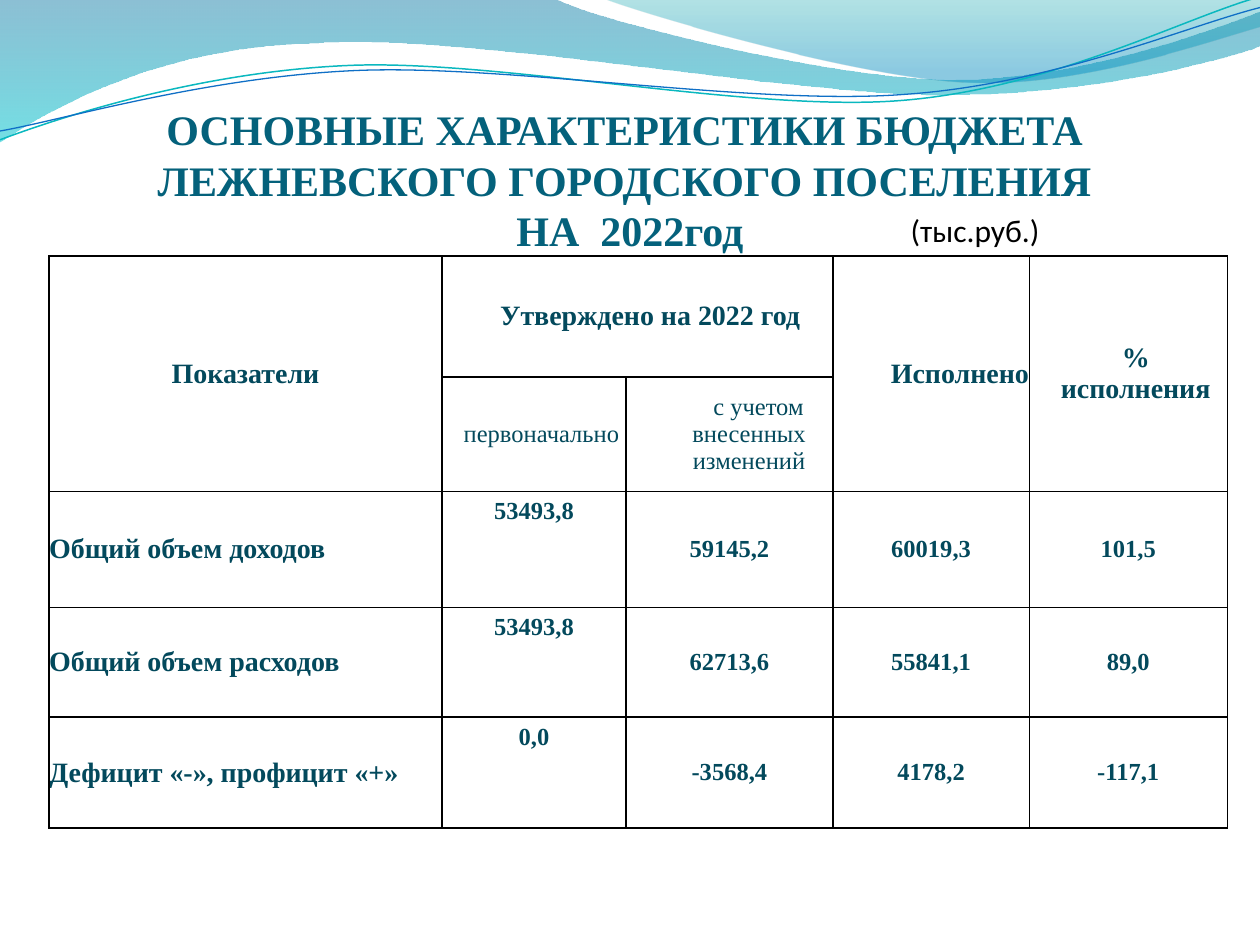
from collections import namedtuple
from dataclasses import dataclass

import pptx
import pptx.dml.color
import pptx.enum.text
import pptx.oxml
import pptx.oxml.ns
import pptx.util
from pptx.util import Cm, Pt

ALIGN = pptx.enum.text.PP_ALIGN
ANCHOR = pptx.enum.text.MSO_ANCHOR
Box = namedtuple("Box", "left top width height")


@dataclass(frozen=True)
class Theme:
    title: str = "04617B"
    body: str = "03495C"
    black: str = "000000"
    serif: str = "Times New Roman"
    sans: str = "Calibri"
    title_size: int = 24
    unit_size: int = 18
    label_size: int = 16
    value_size: int = 14
    border: int = 1


THEME = Theme()

# Waves lie on a grid ten units wide. A pair is a corner, six numbers are a Bézier curve.
# Gradient stops: position, colour, opacity in percent.
FILLED_WAVES = [
    ([(0, 0), (4.4, -0.01), (4.76, 0.17, 6.64, 0.63, 7.58, 0.63),
      (8.53, 0.63, 9.58, 0.26, 10, 0.09), (10.01, 0.36),
      (9.83, 0.44, 8.7, 0.76, 7.46, 0.75), (6.22, 0.75, 3.82, 0.28, 2.57, 0.34),
      (1.29, 0.36, 0.46, 0.83, -0.01, 1.13), (0, 0)],
     [(0, "0074A1", 45), (1, "00C6CF", 55)]),
    ([(4.79, -0.01), (5.09, 0.11, 6.82, 0.62, 7.69, 0.65),
      (8.56, 0.69, 9.61, 0.32, 10, 0.21), (10, 0), (4.79, -0.01)],
     [(0, "00A1A9", 30), (0.8, "008BBF", 45)]),
]
LINE_WAVES = [
    ([(0, 1.11), (0.48, 0.93, 1.58, 0.57, 2.77, 0.52),
      (3.95, 0.47, 5.93, 0.89, 7.13, 0.8), (8.33, 0.71, 9.38, 0.15, 9.98, -0.02)],
     "0AB8BF", 0.85),
    ([(0, 1.04), (0.47, 0.96, 1.64, 0.61, 2.83, 0.56),
      (4.03, 0.51, 5.97, 0.84, 7.17, 0.75), (8.36, 0.67, 9.41, 0.21, 10, 0.06)],
     "0F6FC6", 0.75),
]

COLUMN_WIDTHS = [7.92, 3.71, 4.17, 3.96, 3.99]
ROW_HEIGHTS = [2.44, 2.31, 2.34, 2.21, 2.24]
INDICATORS = [
    ("Общий объем доходов", "53493,8", "59145,2", "60019,3", "101,5"),
    ("Общий объем расходов", "53493,8", "62713,6", "55841,1", "89,0"),
    ("Дефицит «-», профицит «+»", "0,0", "-3568,4", "4178,2", "-117,1"),
]


def rgb(code):
    return pptx.dml.color.RGBColor.from_string(code)


def style(paragraph, size, color, font=THEME.serif, bold=True, align=ALIGN.LEFT):
    paragraph.alignment = align
    paragraph.font.size = Pt(size)
    paragraph.font.color.rgb = rgb(color)
    paragraph.font.name = font
    paragraph.font.bold = bold


def bend(wave, pieces):
    """Join each run of three line segments that stands for a curve into one Bézier."""
    outline = next(wave._element.spPr.iter(pptx.oxml.ns.qn("a:path")))
    segments = iter(outline.findall(pptx.oxml.ns.qn("a:lnTo")))
    for piece in pieces[1:]:
        segment = next(segments)
        if len(piece) == 2:
            continue
        curve = pptx.oxml.parse_xml(f'<a:cubicBezTo {pptx.oxml.ns.nsdecls("a")}/>')
        segment.addprevious(curve)
        for control in (segment, next(segments), next(segments)):
            curve.append(control[0])
            outline.remove(control)


def add_wave(slide, box, pieces, closed):
    unit = box.width / 10
    points = [(box.left + piece[i] * unit, box.top + piece[i + 1] * unit)
              for piece in pieces for i in range(0, len(piece), 2)]
    builder = slide.shapes.build_freeform(*points[0])
    builder.add_line_segments(points[1:], close=closed)
    wave = builder.convert_to_shape()
    bend(wave, pieces)
    wave.shadow.inherit = False
    return wave


def add_waves(slide, box):
    for pieces, stops in FILLED_WAVES:
        wave = add_wave(slide, box, pieces, True)
        wave.line.fill.background()
        wave.fill.gradient()
        wave.fill.gradient_angle = 270
        for stop, (position, color, _) in zip(wave.fill.gradient_stops, stops):
            stop.position = position
            stop.color.rgb = rgb(color)
        colors = wave._element.spPr.iter(pptx.oxml.ns.qn("a:srgbClr"))
        for color, (_, _, opacity) in zip(colors, stops):
            alpha = pptx.oxml.parse_xml(
                f'<a:alpha {pptx.oxml.ns.nsdecls("a")} val="{opacity * 1000}"/>')
            color.append(alpha)
    for pieces, color, width in LINE_WAVES:
        wave = add_wave(slide, box, pieces, False)
        wave.fill.background()
        wave.line.color.rgb = rgb(color)
        wave.line.width = Pt(width)


def add_title(slide, box):
    frame = slide.shapes.add_textbox(*box).text_frame
    frame.word_wrap = True
    frame.vertical_anchor = ANCHOR.BOTTOM
    frame.margin_left = frame.margin_right = frame.margin_bottom = 0
    heading = frame.paragraphs[0]
    heading.text = ("ОСНОВНЫЕ ХАРАКТЕРИСТИКИ БЮДЖЕТА \v"
                    "ЛЕЖНЕВСКОГО ГОРОДСКОГО ПОСЕЛЕНИЯ \vНА  2022год")
    style(heading, THEME.title_size, THEME.title, align=ALIGN.CENTER)


def add_unit(slide, box):
    frame = slide.shapes.add_textbox(*box).text_frame
    frame.word_wrap = True
    unit = frame.paragraphs[0]
    unit.text = "(тыс.руб.)"
    style(unit, THEME.unit_size, THEME.black, THEME.sans, bold=False)


def add_borders(cell):
    properties = cell._tc.get_or_add_tcPr()
    for position, side in enumerate(("lnL", "lnR", "lnT", "lnB")):
        properties.insert(position, pptx.oxml.parse_xml(
            f'<a:{side} {pptx.oxml.ns.nsdecls("a")} w="{Pt(THEME.border)}">'
            f'<a:solidFill><a:srgbClr val="{THEME.black}"/></a:solidFill></a:{side}>'))


def fill_cell(cell, text, size=THEME.value_size, bold=True, align=ALIGN.CENTER,
              indent=0, first_line=0):
    cell.vertical_anchor = ANCHOR.MIDDLE
    cell.margin_left = cell.margin_right = cell.margin_top = cell.margin_bottom = 0
    paragraph = cell.text_frame.paragraphs[0]
    paragraph.text = text
    style(paragraph, size, THEME.body, bold=bold, align=align)
    properties = paragraph._p.get_or_add_pPr()
    properties.set("marL", str(Cm(indent)))
    properties.set("indent", str(Cm(first_line)))
    return paragraph


def add_budget_table(slide, box):
    table = slide.shapes.add_table(len(ROW_HEIGHTS), len(COLUMN_WIDTHS), *box).table
    table.first_row = table.horz_banding = False
    for column, width in zip(table.columns, COLUMN_WIDTHS):
        column.width = int(box.width * width / sum(COLUMN_WIDTHS))
    for row, height in zip(table.rows, ROW_HEIGHTS):
        row.height = int(box.height * height / sum(ROW_HEIGHTS))
    for cell in table.iter_cells():
        cell.fill.background()
        add_borders(cell)

    for column in (0, 3, 4):
        table.cell(0, column).merge(table.cell(1, column))
    table.cell(0, 1).merge(table.cell(0, 2))

    label = THEME.label_size
    fill_cell(table.cell(0, 0), "Показатели", label)
    fill_cell(table.cell(0, 1), "Утверждено на 2022 год", label, align=ALIGN.LEFT, indent=1.17)
    fill_cell(table.cell(0, 3), "Исполнено", label, align=ALIGN.LEFT, indent=1.17)
    share = fill_cell(table.cell(0, 4), "% исполнения", label, indent=0.3)
    share.space_after = Pt(10.5)
    fill_cell(table.cell(1, 1), "первоначально", bold=False, indent=0.3)
    fill_cell(table.cell(1, 2), "с учетом внесенных изменений", bold=False,
              indent=0.79, first_line=0.38)

    for row, (indicator, *values) in enumerate(INDICATORS, start=2):
        fill_cell(table.cell(row, 0), indicator, label, align=ALIGN.LEFT)
        for column, value in enumerate(values, start=1):
            fill_cell(table.cell(row, column), value)
        initial = table.cell(row, 1)
        initial.vertical_anchor = ANCHOR.TOP
        initial.margin_left = initial.margin_right = Cm(0.25)
        initial.margin_top = initial.margin_bottom = Cm(0.13)


def main():
    presentation = pptx.Presentation()
    presentation.slide_width, presentation.slide_height = Cm(25.4), Cm(19.05)
    slide = presentation.slides.add_slide(presentation.slide_layouts[6])
    add_waves(slide, Box(0, 0, presentation.slide_width, Cm(2.87)))
    add_title(slide, Box(Cm(1.27), Cm(1.96), Cm(22.86), Cm(3.18)))
    add_unit(slide, Box(Cm(18.11), Cm(4.12), Cm(4.6), Cm(1.02)))
    add_budget_table(slide, Box(Cm(0.99), Cm(5.16), Cm(23.75), Cm(11.54)))
    presentation.save("out.pptx")


if __name__ == "__main__":
    main()
